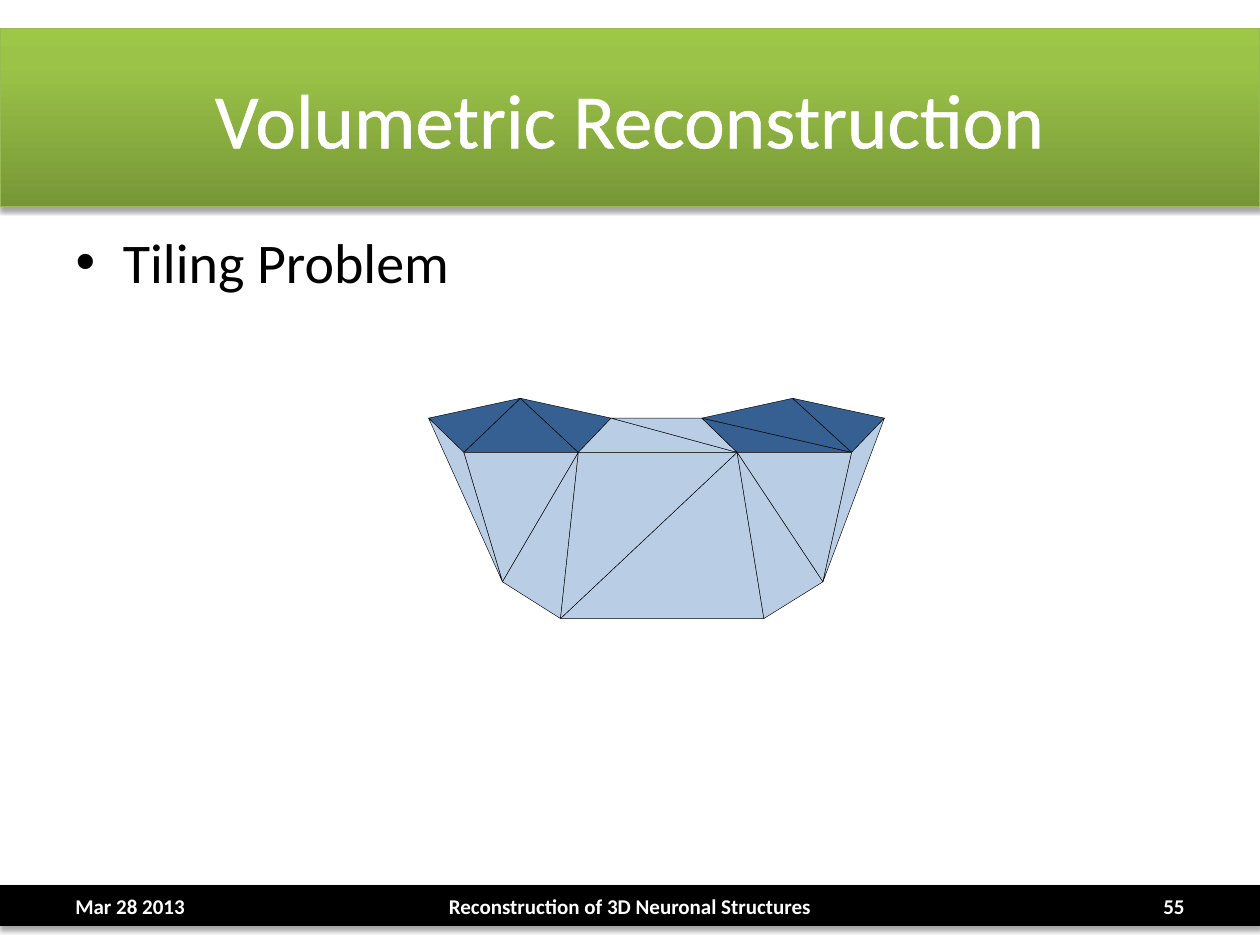
from copy import deepcopy

from lxml import etree
from pptx import Presentation
from pptx import util as u
from pptx.dml.color import RGBColor
from pptx.enum import shapes, text
from pptx.oxml import ns

WHITE, BLACK = "FFFFFF", "000000"
TOP, SIDE = "376092", "B9CDE5"
WIDTH, HEIGHT = 25.4, 19.05
HEADER = (0, 0.58, WIDTH, 3.58)

# Corners of the mesh, in centimetres
POINTS = {
    "left_back": (8.64, 8.43), "left_peak": (10.49, 8.03), "left_inner": (12.32, 8.43),
    "left_front": (9.35, 9.12), "left_corner": (11.66, 9.12),
    "right_inner": (14.15, 8.43), "right_peak": (15.98, 8.03), "right_back": (17.83, 8.43),
    "right_corner": (14.86, 9.12), "right_front": (17.17, 9.12),
    "base_left": (10.13, 11.73), "base_front_left": (11.3, 12.47),
    "base_front_right": (15.4, 12.47), "base_right": (16.59, 11.73),
}
TILES = [
    (TOP, "left_front left_peak left_corner"),
    (TOP, "left_back left_peak left_front"),
    (TOP, "left_peak left_inner left_corner"),
    (SIDE, "left_front left_corner base_left"),
    (SIDE, "left_back base_left left_front"),
    (SIDE, "left_corner base_front_left base_left"),
    (SIDE, "left_corner right_corner left_inner"),
    (SIDE, "left_inner right_corner right_inner"),
    (TOP, "right_corner right_inner right_front"),
    (TOP, "right_inner right_peak right_front"),
    (TOP, "right_peak right_back right_front"),
    (SIDE, "right_corner right_front base_right"),
    (SIDE, "right_front right_back base_right"),
    (SIDE, "base_front_left base_front_right right_corner"),
    (SIDE, "base_front_left right_corner left_corner"),
    (SIDE, "base_front_right base_right right_corner"),
]


def rgb(value):
    return RGBColor.from_string(value)


def add_xml(parent, tag, **attributes):
    return etree.SubElement(parent, ns.qn(tag), attributes)


class Deck:
    font = "Calibri"

    def __init__(self):
        self.prs = Presentation()
        self.prs.slide_width, self.prs.slide_height = u.Cm(WIDTH), u.Cm(HEIGHT)
        self.s = self.prs.slides.add_slide(self.prs.slide_layouts[1])

    def set_text(self, sp, wording, size, colour, bold=False, align=None):
        tf = sp.text_frame
        tf.word_wrap = True
        tf.text = wording
        p = tf.paragraphs[0]
        if align is not None:
            p.alignment = align
        r = p.runs[0]
        r.font.name, r.font.size, r.font.bold = self.font, u.Pt(size), bold
        r.font.color.rgb = rgb(colour)

    def place(self, sp, box):
        sp.left, sp.top, sp.width, sp.height = map(u.Cm, box)

    def band(self, box, stops, line):
        """Add a shadowed bar behind everything; several stops run upwards."""
        sp = self.s.shapes.add_shape(shapes.MSO_SHAPE.RECTANGLE, *map(u.Cm, box))
        if len(stops) == 1:
            sp.fill.solid()
            sp.fill.fore_color.rgb = rgb(stops[0][1])
        else:
            sp.fill.gradient()
            sp.fill.gradient_angle = 90
            stop_list = sp.element.spPr.find(".//" + ns.qn("a:gsLst"))
            while len(stop_list) < len(stops):
                stop_list.append(deepcopy(stop_list[-1]))
            for stop, (position, colour) in zip(sp.fill.gradient_stops, stops):
                stop.position, stop.color.rgb = position, rgb(colour)
        sp.line.color.rgb, sp.line.width = rgb(line), u.Pt(0.75)
        sp.shadow.inherit = False
        effects = sp.element.spPr.find(ns.qn("a:effectLst"))
        shadow = add_xml(effects, "a:outerShdw", blurRad=str(u.Pt(3.1)),
                         dist=str(u.Pt(1.8)), dir="5400000", rotWithShape="0")
        add_xml(add_xml(shadow, "a:srgbClr", val=BLACK), "a:alpha", val="35000")
        self.s.shapes.element.insert(2, sp.element)

    def title(self, wording):
        sp = self.s.shapes.title
        self.place(sp, HEADER)
        sp.text_frame.vertical_anchor = text.MSO_ANCHOR.MIDDLE
        self.set_text(sp, wording, 44, WHITE, align=text.PP_ALIGN.CENTER)
        props = sp.element.find(".//" + ns.qn("a:rPr"))
        outline = add_xml(props, "a:ln", w=str(u.Pt(1.45)))
        add_xml(add_xml(outline, "a:solidFill"), "a:srgbClr", val=WHITE)
        props.insert(0, outline)

    def body(self, wording):
        sp = self.s.placeholders[1]
        self.place(sp, (1.27, 4.45, 22.86, 12.57))
        self.set_text(sp, wording, 32, BLACK)

    def footer(self, wording, left, width, align):
        sp = self.s.shapes.add_textbox(*map(u.Cm, (left, 17.86, width, 0.81)))
        sp.text_frame.vertical_anchor = text.MSO_ANCHOR.MIDDLE
        self.set_text(sp, wording, 12, WHITE, True, align)

    def mesh(self, tiles):
        group = self.s.shapes.add_group_shape()
        for colour, names in tiles:
            start, *rest = [tuple(map(u.Cm, POINTS[name])) for name in names.split()]
            outline = group.shapes.build_freeform(*start)
            outline.add_line_segments(rest, close=True)
            sp = outline.convert_to_shape()
            sp.fill.solid()
            sp.fill.fore_color.rgb = rgb(colour)
            sp.line.color.rgb, sp.line.width = rgb(BLACK), u.Pt(0.25)
            sp.shadow.inherit = False


def main():
    deck = Deck()
    deck.band(HEADER, [(0, "779737"), (0.8, "9BC348"), (1, "9DC746")], "98B955")
    deck.band((0, 17.86, WIDTH, 0.79), [(0, BLACK)], BLACK)
    deck.title("Volumetric Reconstruction")
    deck.body("Tiling Problem")
    deck.footer("Mar 28 2013", 1.27, 5.93, text.PP_ALIGN.LEFT)
    deck.footer("Reconstruction of 3D Neuronal Structures", 8.68, 8.04, text.PP_ALIGN.CENTER)
    deck.footer("55", 18.2, 5.93, text.PP_ALIGN.RIGHT)
    deck.mesh(TILES)
    deck.prs.save("out.pptx")


if __name__ == "__main__":
    main()
